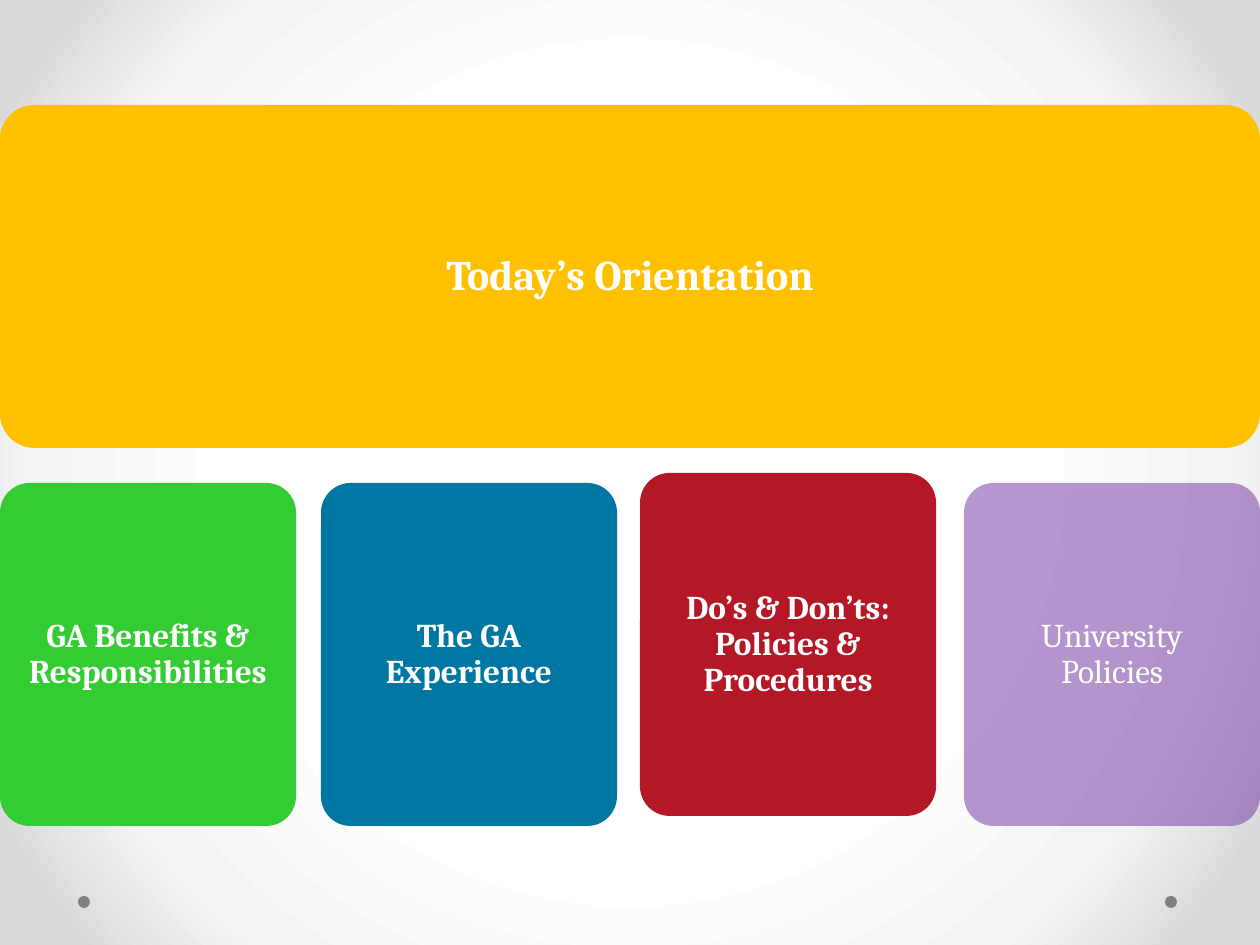
from lxml import etree
from pptx import Presentation
from pptx.dml.color import RGBColor
from pptx.enum.shapes import MSO_SHAPE as SHAPE
from pptx.enum.text import MSO_ANCHOR as ANCHOR, PP_ALIGN as ALIGN
from pptx.oxml.ns import qn
from pptx.util import Pt

EMU_PER_PX = 914400 / 126
COLORS = {
    "white": "FFFFFF",
    "pale": "F4F4F4",
    "edge": "DADADA",
    "dot": "808080",
    "banner": "FFC000",
    "green": "33CC33",
    "blue": "0076A3",
    "red": "B41827",
    "purple": "7030A0",
}
CARD_W, CARD_H, CARD_Y = 296, 343, 483
CARDS = [
    ("GA Benefits & Responsibilities", 0, CARD_Y, "green", True, 100),
    ("The GA Experience", 321, CARD_Y, "blue", True, 100),
    ("University Policies", 964, CARD_Y, "purple", False, 50),
    ("Do’s & Don’ts: Policies & Procedures", 640, 473, "red", True, 100),
]


def px(n):
    return round(n * EMU_PER_PX)


def rgb(name):
    return RGBColor.from_string(COLORS[name])


def set_background(s):
    fill = s.background.fill
    fill.gradient()
    grad = s.background._cSld.find(".//" + qn("a:gradFill"))
    for child in list(grad):
        grad.remove(child)
    stops = etree.SubElement(grad, qn("a:gsLst"))
    for pos, name in ((50, "white"), (76, "pale"), (92, "edge")):
        stop = etree.SubElement(stops, qn("a:gs"), pos=str(pos * 1000))
        etree.SubElement(stop, qn("a:srgbClr"), val=COLORS[name])
    center = etree.SubElement(grad, qn("a:path"), {"path": "circle"})
    sides = {side: "50000" for side in "ltrb"}
    etree.SubElement(center, qn("a:fillToRect"), sides)


def add_block(s, kind, box, color, opacity=100):
    sp = s.shapes.add_shape(kind, *map(px, box))
    sp.shadow.inherit = False
    sp.line.fill.background()
    sp.fill.solid()
    sp.fill.fore_color.rgb = rgb(color)
    if kind == SHAPE.ROUNDED_RECTANGLE:
        sp.adjustments[0] = 0.1
    if opacity < 100:
        clr = sp._element.spPr.find(".//" + qn("a:srgbClr"))
        etree.SubElement(clr, qn("a:alpha"), val=str(opacity * 1000))
    return sp


def set_text(sp, text, size, bold, inset):
    tf = sp.text_frame
    tf.text = text
    tf.word_wrap = True
    tf.vertical_anchor = ANCHOR.MIDDLE
    tf.margin_left = tf.margin_right = px(inset)
    tf.margin_top = tf.margin_bottom = px(inset)
    p = tf.paragraphs[0]
    p.alignment = ALIGN.CENTER
    p.line_spacing = 0.9
    font = p.runs[0].font
    font.name, font.size, font.bold = "Cambria", Pt(size), bold
    font.color.rgb = rgb("white")


def add_title(s, text, box):
    sp = s.shapes.title
    sp.left, sp.top, sp.width, sp.height = map(px, box)
    set_text(sp, text, 24, True, 12)
    s.shapes._spTree.append(sp._element)


def add_card(s, text, x, y, color, bold, opacity):
    box = (x, y, CARD_W, CARD_H)
    sp = add_block(s, SHAPE.ROUNDED_RECTANGLE, box, color, opacity)
    set_text(sp, text, 19, bold, 19)


def main():
    prs = Presentation()
    prs.slide_width, prs.slide_height = px(1260), px(945)
    s = prs.slides.add_slide(prs.slide_layouts[5])
    set_background(s)
    for x in (1165, 78):
        add_block(s, SHAPE.OVAL, (x, 896, 12, 12), "dot")
    add_block(s, SHAPE.ROUNDED_RECTANGLE, (0, 105, 1260, 343), "banner")
    add_title(s, "Today’s Orientation", (10, 115, 1240, 323))
    for card in CARDS:
        add_card(s, *card)
    prs.save("out.pptx")


if __name__ == "__main__":
    main()
